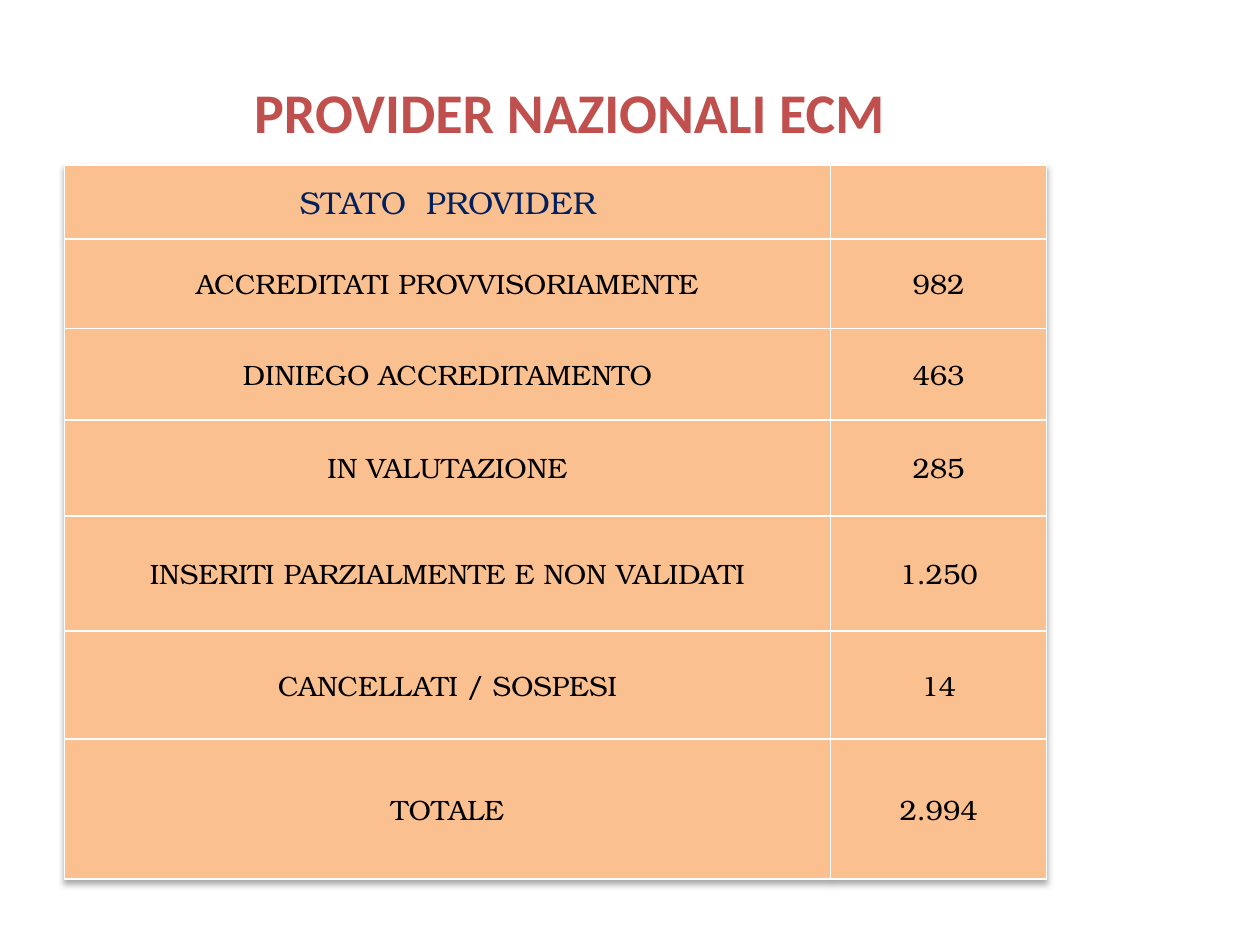
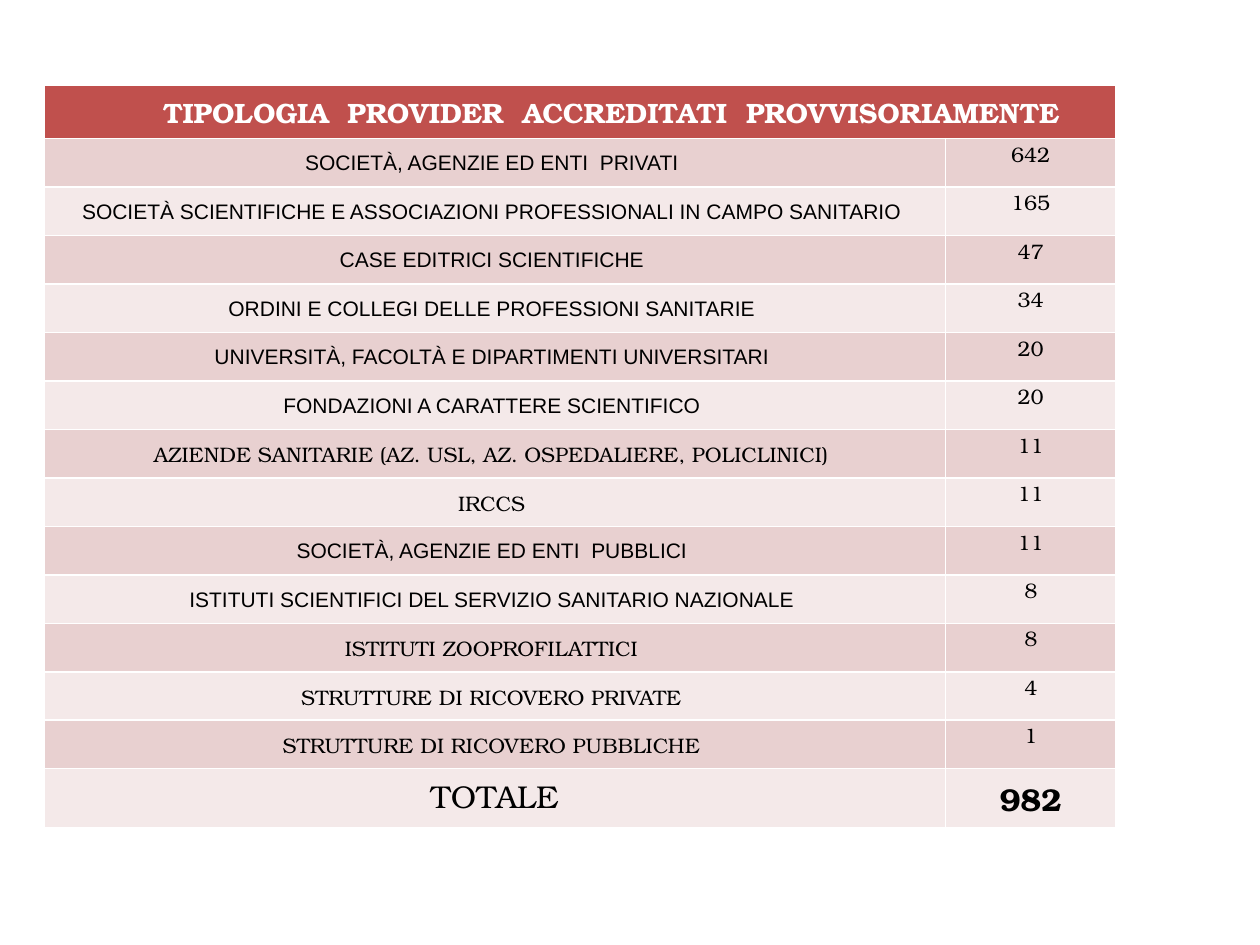
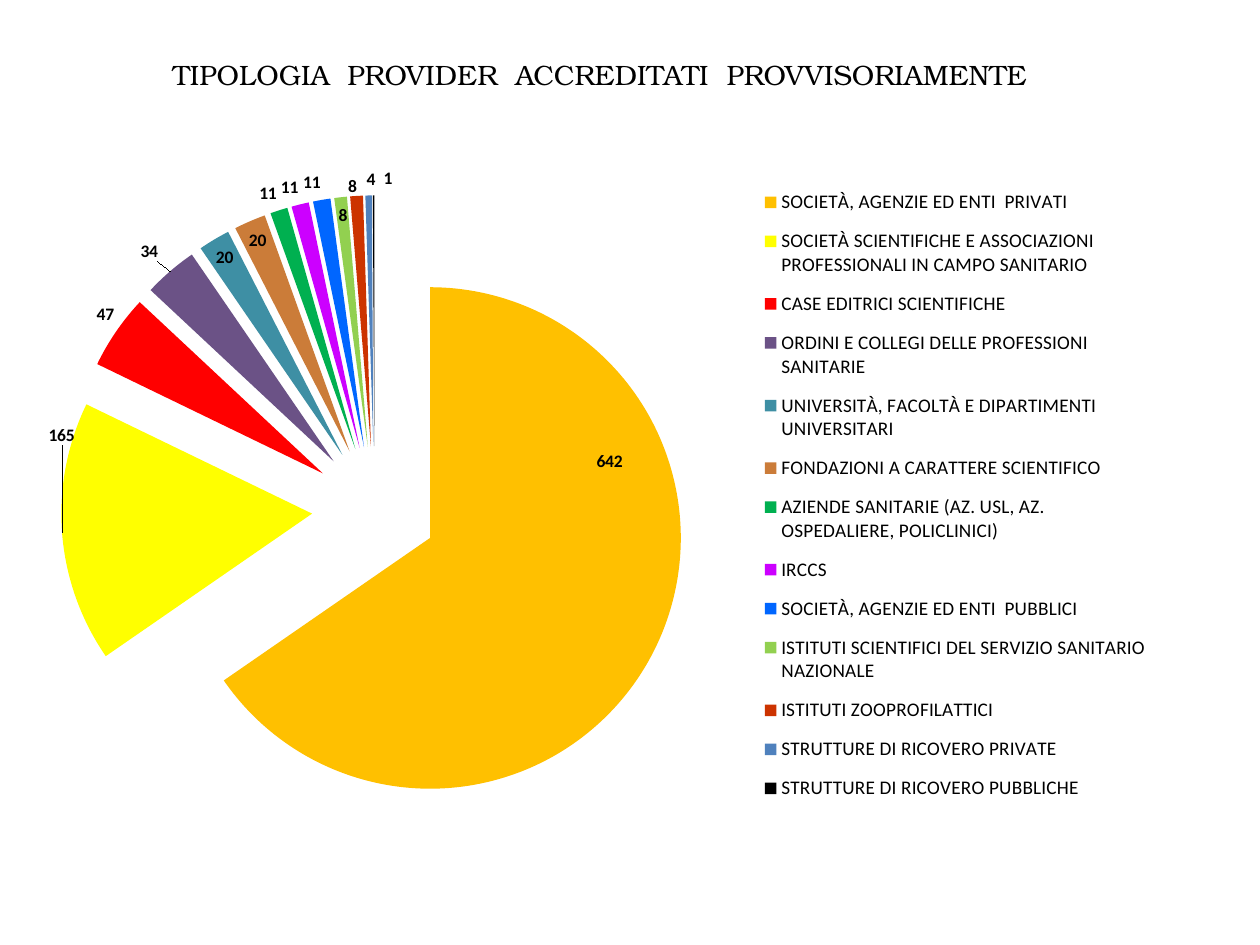
"""Build three slides on national ECM providers: status table, type table, pie chart."""
from lxml.etree import SubElement as Sub
from pptx import Presentation
from pptx.chart.data import CategoryChartData
from pptx.dml.color import RGBColor as RGB
from pptx.enum.chart import XL_CHART_TYPE as CT, XL_LABEL_POSITION as LP, XL_LEGEND_POSITION as LEG
from pptx.enum.text import MSO_ANCHOR as ANC, PP_ALIGN as AL
from pptx.oxml import parse_xml
from pptx.oxml.ns import nsdecls, qn
from pptx.util import Pt

C = {"red": "C0504D", "navy": "002060", "black": "000000", "white": "FFFFFF",
     "peach": "FAC090", "rose": "E8D0D0", "blush": "F4E9E9",
     "amber": "FFC000", "yellow": "FFFF00", "scarlet": "FF0000", "purple": "6B5286",
     "teal": "3E8FA4", "copper": "CB7C39", "green": "00B050", "violet": "CC00FF",
     "azure": "0066FF", "lime": "92D050", "brick": "CC3300", "steel": "4F81BD"}
SERIF, SANS, HEAD = "TeX Gyre Bonum", "Arial", "Calibri"
TYPE_TITLE = "TIPOLOGIA  PROVIDER  ACCREDITATI  PROVVISORIAMENTE"
STATES = [
    ("STATO  PROVIDER", "", 42.2),
    ("ACCREDITATI PROVVISORIAMENTE", "982", 51),
    ("DINIEGO ACCREDITAMENTO", "463", 52.3),
    ("IN VALUTAZIONE", "285", 54.9),
    ("INSERITI PARZIALMENTE E NON VALIDATI", "1.250", 65.8),
    ("CANCELLATI / SOSPESI", "14", 61.8),
    ("TOTALE", "2.994", 80),
]
TYPES = [
    ("SOCIETÀ, AGENZIE ED ENTI  PRIVATI ", 642, SANS, "amber"),
    ("SOCIETÀ SCIENTIFICHE E ASSOCIAZIONI PROFESSIONALI IN CAMPO SANITARIO ", 165, SANS, "yellow"),
    ("CASE EDITRICI SCIENTIFICHE ", 47, SANS, "scarlet"),
    ("ORDINI E COLLEGI DELLE PROFESSIONI SANITARIE ", 34, SANS, "purple"),
    ("UNIVERSITÀ, FACOLTÀ E DIPARTIMENTI UNIVERSITARI ", 20, SANS, "teal"),
    ("FONDAZIONI A CARATTERE SCIENTIFICO ", 20, SANS, "copper"),
    ("AZIENDE SANITARIE (AZ. USL, AZ. OSPEDALIERE, POLICLINICI) ", 11, SERIF, "green"),
    ("IRCCS ", 11, SERIF, "violet"),
    ("SOCIETÀ, AGENZIE ED ENTI  PUBBLICI ", 11, SANS, "azure"),
    ("ISTITUTI SCIENTIFICI DEL SERVIZIO SANITARIO NAZIONALE ", 8, SANS, "lime"),
    ("ISTITUTI ZOOPROFILATTICI ", 8, SERIF, "brick"),
    ("STRUTTURE DI RICOVERO PRIVATE ", 4, SERIF, "steel"),
    ("STRUTTURE DI RICOVERO PUBBLICHE ", 1, SERIF, "black"),
]
LABEL_SHIFTS = {0: (0.06, -0.2), 1: (-0.11, -0.13), 2: (-0.1, -0.13),
                3: (-0.09, -0.17), 10: (-0.01, -0.2), 11: (0, -0.21)}


def write(tf, text, size, font, color, bold=False):
    p = tf.paragraphs[0]
    p.alignment = AL.CENTER
    if text:
        r = p.add_run()
        r.text = text
        r.font.size, r.font.name, r.font.bold = Pt(size), font, bold
        r.font.color.rgb = RGB.from_string(C[color])
    return p


def make_layout(**values):
    layout = parse_xml(f"<c:layout {nsdecls('c')}><c:manualLayout/></c:layout>")
    for tag, val in values.items():
        Sub(layout[0], qn("c:" + tag), val=str(val))
    return layout


prs = Presentation()
prs.slide_width, prs.slide_height = Pt(720), Pt(540)
title_only, blank = prs.slide_layouts[5], prs.slide_layouts[6]

s = prs.slides.add_slide(title_only)
title = s.shapes.title
title.left, title.top, title.width, title.height = Pt(36), Pt(21.6), Pt(579), Pt(84.2)
title.text_frame.vertical_anchor = ANC.MIDDLE
write(title.text_frame, "PROVIDER NAZIONALI ECM", 32, HEAD, "red", True)

states = s.shapes.add_table(len(STATES), 2, Pt(36.9), Pt(94.4), Pt(561.2), Pt(408)).table
states.columns[0].width, states.columns[1].width = Pt(437.7), Pt(123.5)
for i, (state, count, height) in enumerate(STATES):
    states.rows[i].height = Pt(height)
    for cell, text in zip(states.rows[i].cells, (state, count)):
        cell.vertical_anchor = ANC.MIDDLE
        cell.fill.solid()
        cell.fill.fore_color.rgb = RGB.from_string(C["peach"])
        write(cell.text_frame, text, 16 if i else 18, SERIF, "black" if i else "navy")
states._tbl.tblPr.insert(0, parse_xml(
    f'<a:effectLst {nsdecls("a")}><a:outerShdw blurRad="40000" dist="23000" dir="5400000" rotWithShape="0">'
    f'<a:srgbClr val="{C["black"]}"><a:alpha val="35000"/></a:srgbClr></a:outerShdw></a:effectLst>'))

s = prs.slides.add_slide(blank)
last = len(TYPES) + 1
types = s.shapes.add_table(last + 1, 2, Pt(25.2), Pt(48.7), Pt(612.4), Pt(419.8)).table
types.columns[0].width, types.columns[1].width = Pt(515.2), Pt(97.2)
for row in types.rows:
    row.height = Pt(27.7)
types.rows[0].height, types.rows[last].height = Pt(28.8), Pt(31)
types.cell(0, 0).merge(types.cell(0, 1))
p = write(types.cell(0, 0).text_frame, TYPE_TITLE, 16, SERIF, "white", True)
p.level = 1
p._p.get_or_add_pPr().set("marL", str(Pt(36)))
for i, (name, count, font, _) in enumerate(TYPES, 1):
    for cell, text, face in zip(types.rows[i].cells, (name, str(count)), (font, SERIF)):
        cell.margin_left = cell.margin_right = cell.margin_top = Pt(0.7)
        cell.margin_bottom = 0
        write(cell.text_frame, text, 12, face, "black")
    types.cell(i, 0).vertical_anchor = ANC.MIDDLE
write(types.cell(last, 0).text_frame, "TOTALE", 18, SERIF, "black")
write(types.cell(last, 1).text_frame, "982", 18, SERIF, "black", True)
for i, row in enumerate(types.rows):
    for cell in row.cells:
        cell.fill.solid()
        cell.fill.fore_color.rgb = RGB.from_string(C["red" if i == 0 else "rose" if i % 2 else "blush"])

for table in (states, types):
    for cell in table.iter_cells():
        for i, side in enumerate(("lnL", "lnR", "lnT", "lnB")):
            cell._tc.get_or_add_tcPr().insert(i, parse_xml(
                f'<a:{side} {nsdecls("a")} w="{Pt(1)}"><a:solidFill><a:srgbClr val="{C["white"]}"/>'
                f'</a:solidFill></a:{side}>'))

s = prs.slides.add_slide(title_only)
title = s.shapes.title
title.left, title.top, title.width, title.height = Pt(36.9), Pt(9), Pt(612), Pt(67)
title.text_frame.vertical_anchor = ANC.MIDDLE
write(title.text_frame, TYPE_TITLE, 16, SERIF, "black")

data = CategoryChartData()
data.categories = [t[0] for t in TYPES]
data.add_series("Series 1", [t[1] for t in TYPES])
chart = s.shapes.add_chart(CT.PIE, Pt(8.6), Pt(88.6), Pt(652.3), Pt(385.2), data).chart
chart.has_title = False
chart.font.size, chart.font.name = Pt(10), HEAD
chart.font.color.rgb = RGB.from_string(C["black"])
chart.has_legend = True
legend = chart.legend
legend.position, legend.include_in_layout = LEG.RIGHT, False
legend.font.size, legend.font.name = Pt(11), HEAD
legend._element.find(qn("c:legendPos")).addnext(
    make_layout(xMode="edge", yMode="edge", x=0.66, y=0.03, w=0.34, h=0.95))
area = chart._chartSpace.chart.plotArea
for old in area.findall(qn("c:layout")):
    area.remove(old)
area.insert(0, make_layout(layoutTarget="inner", xMode="edge", yMode="edge",
                           x=0.01, y=0.06, w=0.61, h=0.93))

plot = chart.plots[0]
plot.vary_by_categories = True
series = plot.series[0]
series._element.find(qn("c:tx")).addnext(parse_xml(f'<c:explosion {nsdecls("c")} val="25"/>'))
for i, (*_, color) in enumerate(TYPES):
    fill = series.points[i].format.fill
    fill.solid()
    fill.fore_color.rgb = RGB.from_string(C[color])
labels = series.data_labels
labels.show_value, labels.position = True, LP.BEST_FIT
labels.font.size, labels.font.bold = Pt(10), True
for i, (x, y) in LABEL_SHIFTS.items():
    label = series.points[i].data_label
    label.font.size, label.font.bold = Pt(10), True
    label.position = LP.CENTER
    label._dLbl.insert(1, make_layout(x=x, y=y))

prs.save("out.pptx")
